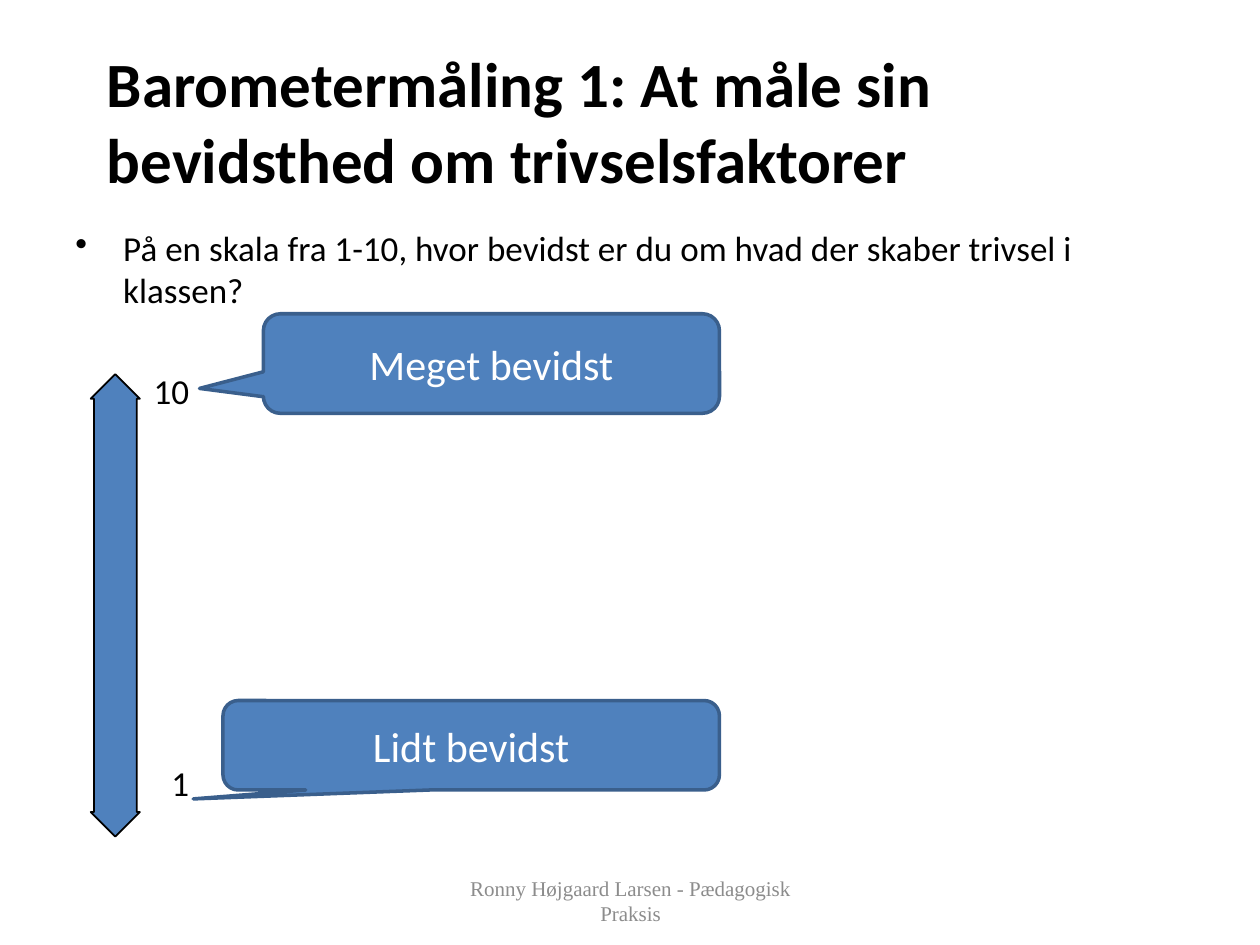
from lxml import etree
from pptx import Presentation
from pptx.dml.color import RGBColor
from pptx.enum.shapes import MSO_SHAPE
from pptx.enum.text import MSO_ANCHOR, PP_ALIGN
from pptx.oxml.ns import qn
from pptx.util import Inches, Pt

ARROW, CALLOUT = MSO_SHAPE.UP_DOWN_ARROW, MSO_SHAPE.ROUNDED_RECTANGULAR_CALLOUT
TOP, MIDDLE = MSO_ANCHOR.TOP, MSO_ANCHOR.MIDDLE
LEFT, CENTER, RIGHT = PP_ALIGN.LEFT, PP_ALIGN.CENTER, PP_ALIGN.RIGHT

COLORS = {"text": "000000", "blue": "4F81BD", "edge": "3A5F8C",
          "white": "FFFFFF", "footer": "8C8C8C"}

TITLE = "Barometermåling 1: At måle sin bevidsthed om trivselsfaktorer"
QUESTION = "På en skala fra 1-10, hvor bevidst er du om hvad der skaber trivsel i klassen?"
FOOTER = "Ronny Højgaard Larsen - Pædagogisk Praksis"
SCALE_LABELS = [("10", 3.1), ("1", 6.21)]
CALLOUTS = [
    ("Meget bevidst", (2.09, 2.49, 3.62, 0.79), (-0.64, 0.25, 0.17)),
    ("Lidt bevidst", (1.77, 5.56, 3.94, 0.71), (-0.56, 0.6, 0.17)),
]
BARREL = (0.72, 2.97, 0.39, 3.67)
LABEL_LEFT, LABEL_WIDTH, LABEL_HEIGHT = 1.0, 0.6, 0.44
INDENT = 0.38


def rgb(name):
    return RGBColor.from_string(COLORS[name])


def write(s, text, size, color="text", align=LEFT, anchor=MIDDLE, font="Calibri", bold=False):
    tf = s.text_frame
    tf.word_wrap = True
    tf.vertical_anchor = anchor
    p = tf.paragraphs[0]
    p.text = text
    p.alignment = align
    p.font.size = Pt(size)
    p.font.name = font
    p.font.bold = bold
    p.font.color.rgb = rgb(color)
    return p


def add_text(slide, box, text, size, **style):
    s = slide.shapes.add_textbox(*map(Inches, box))
    return write(s, text, size, **style)


def add_shape(slide, kind, box, adjustments, edge, width):
    s = slide.shapes.add_shape(kind, *map(Inches, box))
    for i, value in enumerate(adjustments):
        s.adjustments[i] = value
    s.shadow.inherit = False
    s.fill.solid()
    s.fill.fore_color.rgb = rgb("blue")
    s.line.color.rgb = rgb(edge)
    s.line.width = Pt(width)
    return s


def add_bullet(p):
    pPr = p._p.get_or_add_pPr()
    pPr.set("marL", str(Inches(INDENT)))
    pPr.set("indent", str(-Inches(INDENT)))
    bullet = etree.Element(qn("a:buChar"), char="•")
    pPr.insert_element_before(bullet, "a:tabLst", "a:defRPr", "a:extLst")


def main():
    prs = Presentation()
    prs.slide_width, prs.slide_height = Inches(10), Inches(7.5)
    slide = prs.slides.add_slide(prs.slide_layouts[6])

    add_text(slide, (0.75, 0.42, 7.25, 1.07), TITLE, 36, bold=True)
    add_bullet(add_text(slide, (0.5, 1.75, 9, 0.8), QUESTION, 20, anchor=TOP))
    for label, center in SCALE_LABELS:
        box = (LABEL_LEFT, center - LABEL_HEIGHT / 2, LABEL_WIDTH, LABEL_HEIGHT)
        add_text(slide, box, label, 20, align=RIGHT)

    add_shape(slide, ARROW, BARREL, (0.5, 0.87), "text", 1)
    add_text(slide, (3.42, 6.95, 3.17, 0.4), FOOTER, 12, color="footer",
             align=CENTER, font="Times New Roman")
    for text, box, adjustments in CALLOUTS:
        s = add_shape(slide, CALLOUT, box, adjustments, "edge", 2)
        write(s, text, 24, color="white", align=CENTER)

    prs.save("out.pptx")


if __name__ == "__main__":
    main()
